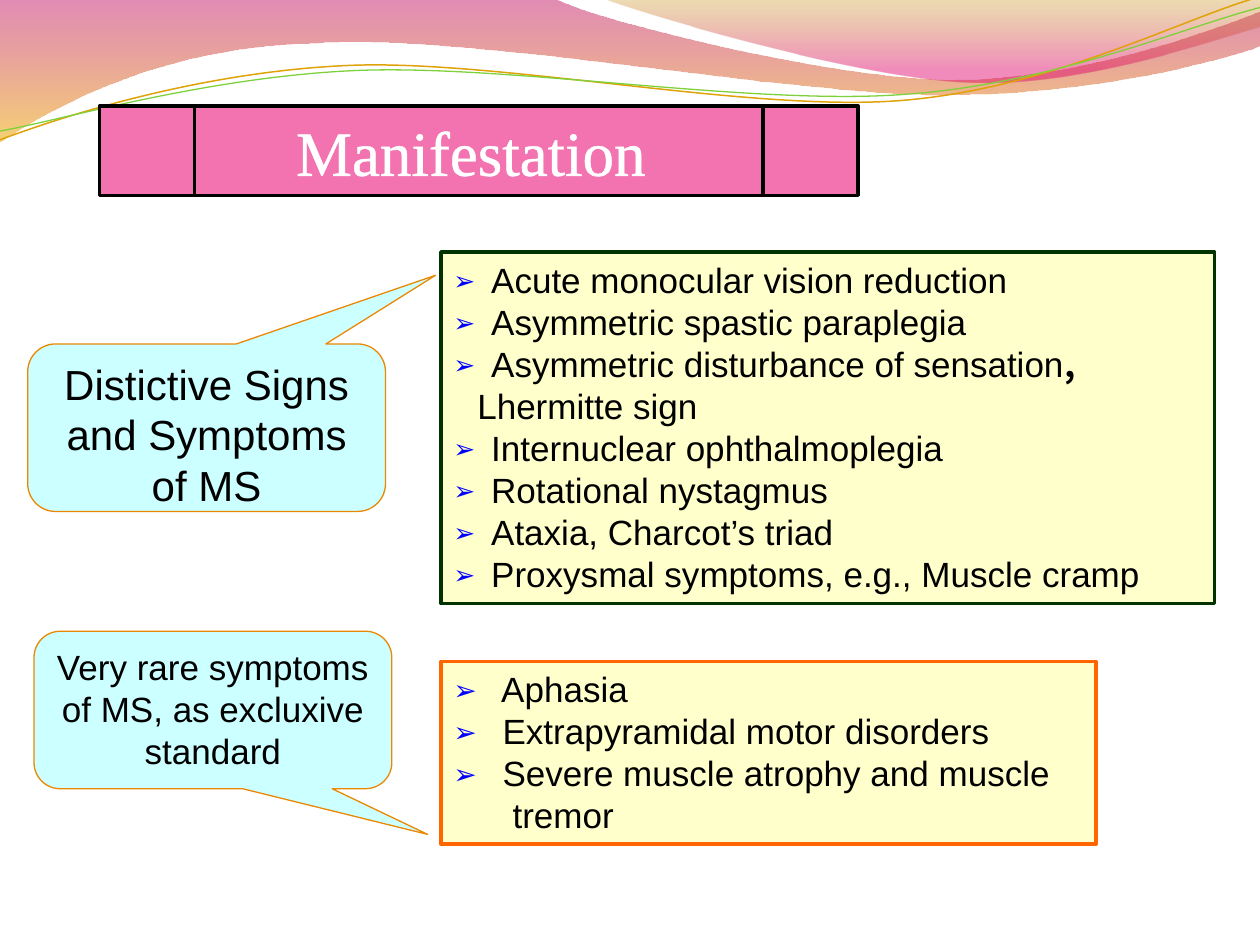
from dataclasses import dataclass

import pptx
import pptx.dml.color
import pptx.enum.shapes
import pptx.enum.text
import pptx.oxml
import pptx.oxml.ns
import pptx.util

Inches = pptx.util.Inches
Pt = pptx.util.Pt
RGB = pptx.dml.color.RGBColor.from_string
Shape = pptx.enum.shapes.MSO_SHAPE
Anchor = pptx.enum.text.MSO_ANCHOR
Align = pptx.enum.text.PP_ALIGN
qn = pptx.oxml.ns.qn
NS = pptx.oxml.ns.nsdecls("a")


@dataclass(frozen=True)
class Theme:
    font: str = "Arial"
    serif: str = "Times New Roman"
    east_asian: str = "Noto Sans CJK SC"
    title_size: float = 36
    label_size: float = 24
    body_size: float = 20
    ink: str = "000000"
    white: str = "FFFFFF"
    bullet: str = "0000FF"
    title_fill: str = "F273AF"
    list_fill: str = "FFFFCC"
    callout_fill: str = "CCFFFF"
    callout_line: str = "EB8803"
    signs_line: str = "003300"
    rare_line: str = "FF6600"


THEME = Theme()


@dataclass(frozen=True)
class Stop:
    position: float
    color: str
    alpha: int


@dataclass(frozen=True)
class Curve:
    """A start point, then segments of one point (line) or three (cubic)."""
    start: tuple
    segments: tuple
    stops: tuple = ()
    line: str = ""
    width: float = 0


@dataclass(frozen=True)
class Callout:
    text: str
    box: tuple
    tip: tuple
    size: float


@dataclass(frozen=True)
class Item:
    text: str
    indent: float
    bulleted: bool = True
    tail: str = ""


@dataclass(frozen=True)
class ListBox:
    box: tuple
    line: str
    bullet_percent: int
    items: tuple


WAVES = (
    Curve((0, 0), (
        ((4.4, -0.01),),
        ((4.76, 0.17), (6.64, 0.63), (7.58, 0.63)),
        ((8.53, 0.63), (9.58, 0.26), (10, 0.09)),
        ((10.01, 0.36),),
        ((9.83, 0.44), (8.7, 0.76), (7.46, 0.75)),
        ((6.22, 0.75), (3.82, 0.28), (2.57, 0.34)),
        ((1.29, 0.36), (0.46, 0.83), (-0.01, 1.13)),
        ((0, 0),),
    ), stops=(Stop(0, "BD0059", 45), Stop(1, "F0AB00", 55))),
    Curve((4.79, -0.01), (
        ((5.09, 0.11), (6.82, 0.62), (7.69, 0.65)),
        ((8.56, 0.69), (9.61, 0.32), (10, 0.21)),
        ((10, 0),),
        ((4.79, -0.01),),
    ), stops=(Stop(0, "C38B00", 30), Stop(0.8, "E1006B", 45))),
    Curve((0, 1.11), (
        ((0.48, 0.93), (1.58, 0.57), (2.77, 0.52)),
        ((3.95, 0.47), (5.93, 0.89), (7.13, 0.8)),
        ((8.33, 0.71), (9.38, 0.15), (9.98, -0.02)),
    ), line="E0A209", width=0.85),
    Curve((0, 1.04), (
        ((0.47, 0.96), (1.64, 0.61), (2.83, 0.56)),
        ((4.03, 0.51), (5.97, 0.84), (7.17, 0.75)),
        ((8.36, 0.67), (9.41, 0.21), (10, 0.06)),
    ), line="7FD13B", width=0.75),
)

LISTS = (
    ListBox((3.5, 2, 6.14, 2.79), THEME.signs_line, 75, (
        Item("Acute monocular vision reduction", 0.3),
        Item("Asymmetric spastic paraplegia", 0.3),
        Item("Asymmetric disturbance of sensation", 0.3, tail=","),
        Item("Lhermitte sign", 0.19, bulleted=False),
        Item("Internuclear ophthalmoplegia", 0.3),
        Item("Rotational nystagmus", 0.3),
        Item("Ataxia, Charcot’s triad", 0.3),
        Item("Proxysmal symptoms, e.g., Muscle cramp", 0.3),
    )),
    ListBox((3.5, 5.25, 5.2, 1.45), THEME.rare_line, 80, (
        Item("Aphasia", 0.38),
        Item("Extrapyramidal motor disorders", 0.39),
        Item("Severe muscle atrophy and muscle", 0.39),
        Item("tremor", 0.47, bulleted=False),
    )),
)

CALLOUTS = (
    Callout("Very rare symptoms of MS, as excluxive standard",
            (0.27, 5.01, 2.84, 1.25), (0.6, 0.79), THEME.body_size),
    Callout("Distictive Signs and Symptoms of MS",
            (0.22, 2.73, 2.84, 1.33), (0.64, -0.91), THEME.label_size),
)


def bend(sp, curve: Curve) -> None:
    """Merge each three line steps of a cubic segment into one Bézier step."""
    steps = iter(list(sp._element.iter(qn("a:lnTo"))))
    for segment in curve.segments:
        parts = [next(steps) for _ in segment]
        if len(parts) == 3:
            cubic = pptx.oxml.parse_xml(f"<a:cubicBezTo {NS}/>")
            parts[0].addprevious(cubic)
            for part in parts:
                cubic.append(part[0])
                part.getparent().remove(part)


def draw_wave(s, curve: Curve) -> None:
    points = [tuple(map(Inches, point)) for segment in curve.segments for point in segment]
    builder = s.shapes.build_freeform(*map(Inches, curve.start))
    builder.add_line_segments(points, close=bool(curve.stops))
    sp = builder.convert_to_shape()
    bend(sp, curve)
    sp.shadow.inherit = False
    if not curve.stops:
        sp.fill.background()
        sp.line.color.rgb = RGB(curve.line)
        sp.line.width = Pt(curve.width)
        return
    sp.line.fill.background()
    sp.fill.gradient()
    sp.fill.gradient_angle = 270
    for target, stop in zip(sp.fill.gradient_stops, curve.stops):
        target.position = stop.position
        target.color.rgb = RGB(stop.color)
    for clr, stop in zip(sp._element.spPr.iter(qn("a:srgbClr")), curve.stops):
        clr.append(pptx.oxml.parse_xml(f'<a:alpha {NS} val="{stop.alpha * 1000}"/>'))


def add_box(s, kind, box: tuple, *, fill: str, line: str, width: float, anchor=Anchor.TOP):
    sp = s.shapes.add_shape(kind, *map(Inches, box))
    sp.shadow.inherit = False
    sp.fill.solid()
    sp.fill.fore_color.rgb = RGB(fill)
    sp.line.color.rgb = RGB(line)
    sp.line.width = Pt(width)
    sp.text_frame.word_wrap = True
    sp.text_frame.vertical_anchor = anchor
    return sp


def add_text(p, text: str, *, size=THEME.body_size, font=THEME.font, color=THEME.ink,
             bold=False, align=Align.LEFT):
    p.alignment = align
    r = p.add_run()
    r.text = text
    r.font.size = Pt(size)
    r.font.name = font
    r.font.bold = bold
    r.font.color.rgb = RGB(color)
    return r


def set_bullet(p, item: Item, percent: int) -> None:
    pPr = p._p.get_or_add_pPr()
    pPr.set("marL", str(Inches(item.indent)))
    pPr.set("indent", str(-Inches(item.indent) if item.bulleted else 0))
    if item.bulleted:
        for xml in (f'<a:buClr {NS}><a:srgbClr val="{THEME.bullet}"/></a:buClr>',
                    f'<a:buSzPct {NS} val="{percent * 1000}"/>',
                    f'<a:buFont {NS} typeface="{THEME.east_asian}"/>',
                    f'<a:buChar {NS} char="➢"/>'):
            pPr.append(pptx.oxml.parse_xml(xml))


def draw_list(s, group: ListBox) -> None:
    tf = add_box(s, Shape.RECTANGLE, group.box, fill=THEME.list_fill,
                 line=group.line, width=2).text_frame
    for i, item in enumerate(group.items):
        p = tf.add_paragraph() if i else tf.paragraphs[0]
        add_text(p, item.text)
        if item.tail:
            add_text(p, item.tail, font=THEME.east_asian, bold=True)
        set_bullet(p, item, group.bullet_percent)


def draw_callout(s, callout: Callout) -> None:
    sp = add_box(s, Shape.ROUNDED_RECTANGULAR_CALLOUT, callout.box,
                 fill=THEME.callout_fill, line=THEME.callout_line, width=0.75)
    sp.adjustments[0], sp.adjustments[1] = callout.tip
    add_text(sp.text_frame.paragraphs[0], callout.text, size=callout.size, align=Align.CENTER)


def draw_title(s) -> None:
    sp = add_box(s, Shape.FLOWCHART_PREDEFINED_PROCESS, (0.79, 0.84, 6.02, 0.71),
                 fill=THEME.title_fill, line=THEME.ink, width=2, anchor=Anchor.MIDDLE)
    sp.text_frame.word_wrap = False
    r = add_text(sp.text_frame.paragraphs[0], "Manifestation ", size=THEME.title_size,
                 font=THEME.serif, color=THEME.white, align=Align.CENTER)
    r.font._element.insert(0, pptx.oxml.parse_xml(
        f'<a:ln {NS} w="{Pt(1.45)}"><a:solidFill><a:srgbClr val="{THEME.white}"/>'
        '</a:solidFill></a:ln>'))


def main() -> None:
    prs = pptx.Presentation()
    prs.slide_width, prs.slide_height = Inches(10), Inches(7.5)
    s = prs.slides.add_slide(prs.slide_layouts[6])
    for wave in WAVES:
        draw_wave(s, wave)
    for group in LISTS:
        draw_list(s, group)
    for callout in CALLOUTS:
        draw_callout(s, callout)
    draw_title(s)
    prs.save("out.pptx")


if __name__ == "__main__":
    main()
